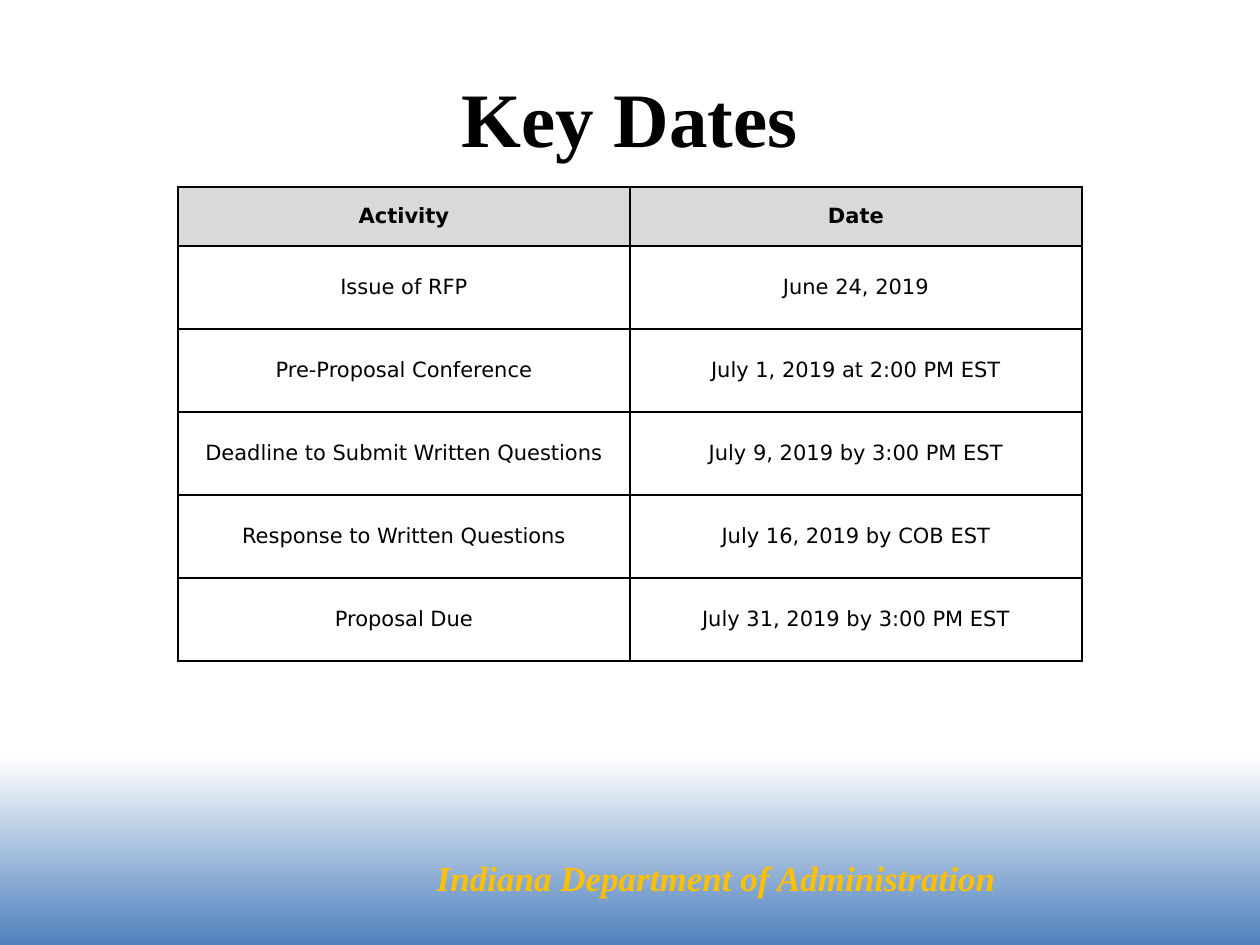
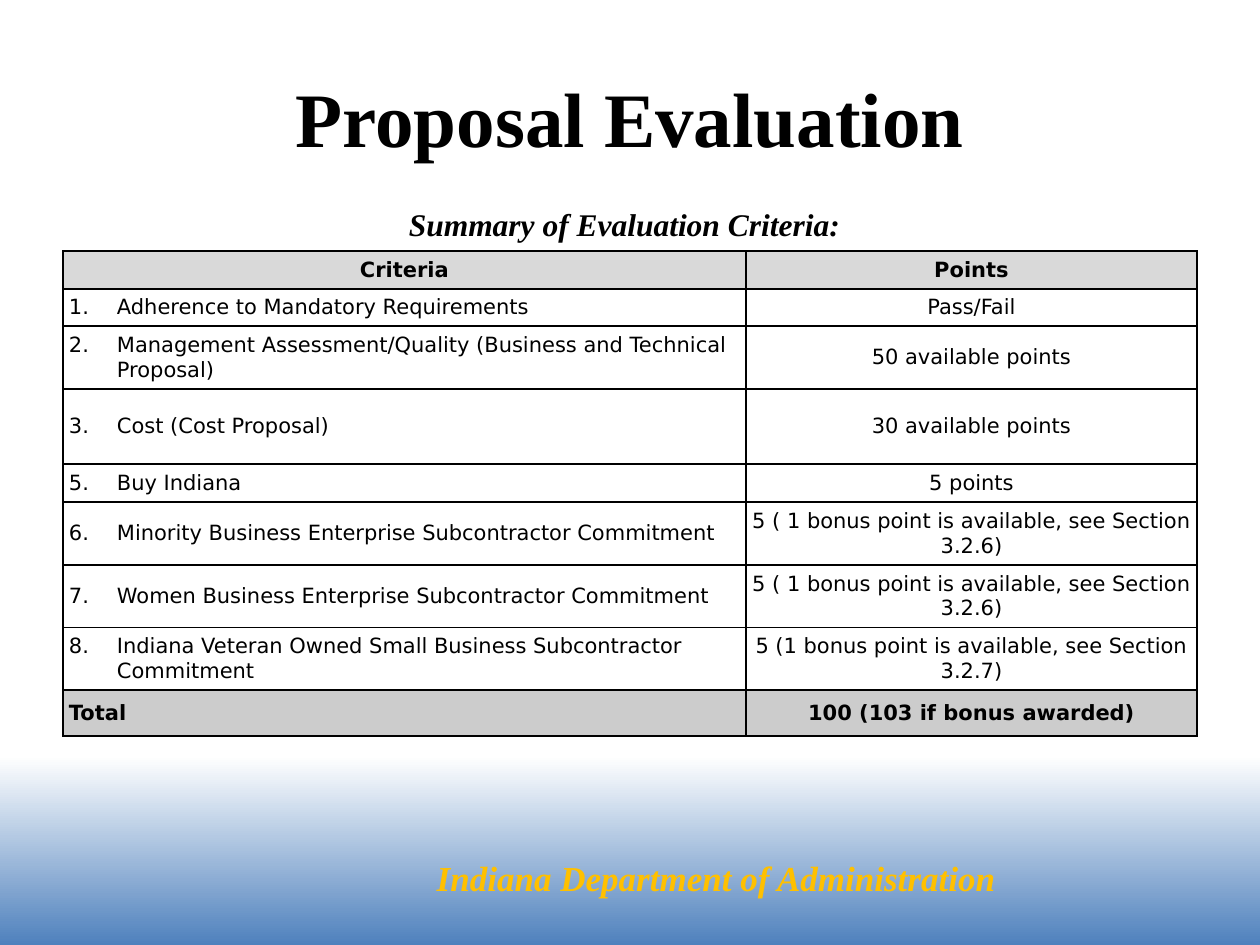
from lxml.etree import SubElement as Sub
from pptx import Presentation
from pptx.dml.color import RGBColor
from pptx.enum.text import MSO_ANCHOR as Anchor, MSO_AUTO_SIZE as Fit, PP_ALIGN as Align
from pptx.oxml.ns import qn
from pptx.util import Emu, Pt

SERIF, SANS = "Times New Roman", "DejaVu Sans"
BLACK, WHITE, BLUE, GOLD = "000000", "FFFFFF", "4F81BD", "FFC000"
HEAD, TOTAL = "D9D9D9", "CCCCCC"
FOOTER = "Indiana Department of Administration"

DATES = [
    ("Activity", "Date"),
    ("Issue of RFP", "June 24, 2019"),
    ("Pre-Proposal Conference", "July 1, 2019 at 2:00 PM EST"),
    ("Deadline to Submit Written Questions", "July 9, 2019 by 3:00 PM EST"),
    ("Response to Written Questions", "July 16, 2019 by COB EST"),
    ("Proposal Due", "July 31, 2019 by 3:00 PM EST"),
]

# list number, criterion, points, row height
CRITERIA = [
    (None, "Criteria", "Points", 38),
    (1, "Adherence to Mandatory Requirements", "Pass/Fail", 37),
    (2, "Management Assessment/Quality (Business and Technical Proposal)",
     "50 available points", 63),
    (3, "Cost (Cost Proposal)", "30 available points", 75),
    (5, "Buy Indiana", "5 points", 38),
    (6, "Minority Business Enterprise Subcontractor Commitment",
     "5 ( 1 bonus point is available, see Section 3.2.6)", 63),
    (7, "Women Business Enterprise Subcontractor Commitment",
     "5 ( 1 bonus point is available, see Section 3.2.6)", 62),
    (8, "Indiana Veteran Owned Small Business Subcontractor Commitment",
     "5 (1 bonus point is available, see Section 3.2.7)", 62),
    (None, "Total", "100 (103 if bonus awarded)", 46),
]


def px(n):
    return Emu(round(n * 914400 / 126))


def rgb(code):
    return RGBColor.from_string(code)


def write(frame, text, size, face, color=BLACK, bold=True, slant=False, align=Align.CENTER):
    frame.text = text
    para = frame.paragraphs[0]
    para.alignment = align
    font = para.runs[0].font
    font.size, font.name = Pt(size), face
    font.bold, font.italic = bold, slant
    font.color.rgb = rgb(color)


def add_label(slide, box, text, size, color, align):
    frame = slide.shapes.add_textbox(*map(px, box)).text_frame
    frame.word_wrap = True
    frame.auto_size = Fit.SHAPE_TO_FIT_TEXT
    write(frame, text, size, SERIF, color, slant=True, align=align)


def add_slide(deck, text):
    slide = deck.slides.add_slide(deck.slide_layouts[5])
    title = slide.shapes.title
    title.left, title.top, title.width, title.height = map(px, (63, 38, 1134, 157))
    title.text_frame.vertical_anchor = Anchor.MIDDLE
    write(title.text_frame, text, 44, SERIF)
    add_label(slide, (336, 850, 672, 55), FOOTER, 20, GOLD, Align.RIGHT)
    return slide


def edge(cell):
    """Draw a thin black line on all four sides of the cell."""
    props = cell._tc.get_or_add_tcPr()
    for side in "LRTB":
        line = Sub(props, qn(f"a:ln{side}"), w=str(Pt(1)))
        Sub(Sub(line, qn("a:solidFill")), qn("a:srgbClr"), val=BLACK)


def number(cell, start):
    """Give the cell a hanging list number."""
    props = cell.text_frame.paragraphs[0]._p.get_or_add_pPr()
    props.set("marL", str(px(48)))
    props.set("indent", str(-px(48)))
    Sub(props, qn("a:buAutoNum"), type="arabicPeriod", startAt=str(start))


def add_grid(slide, left, top, cols, tall, rows, fills):
    """Add a bordered table; fills maps a row index to its shade."""
    grid = slide.shapes.add_table(
        len(rows), len(cols), px(left), px(top), px(sum(cols)), px(sum(tall))).table
    grid.first_row = grid.horz_banding = False
    for col, wide in zip(grid.columns, cols):
        col.width = px(wide)
    for i, (row, high, texts) in enumerate(zip(grid.rows, tall, rows)):
        row.height = px(high)
        for cell, text in zip(row.cells, texts):
            cell.margin_left = cell.margin_right = px(6)
            cell.margin_top = cell.margin_bottom = px(6)
            cell.vertical_anchor = Anchor.MIDDLE
            write(cell.text_frame, text, 12, SANS, bold=i in fills)
            edge(cell)
            if i in fills:
                cell.fill.solid()
                cell.fill.fore_color.rgb = rgb(fills[i])
            else:
                cell.fill.background()
    return grid


def set_back(deck):
    fill = deck.slide_master.background.fill
    fill.gradient()
    fill.gradient_angle = 90
    for stop, place, color in zip(fill.gradient_stops, (0, 0.2), (BLUE, WHITE)):
        stop.position = place
        stop.color.rgb = rgb(color)


def add_dates(deck):
    slide = add_slide(deck, "Key Dates")
    tall = [59] + [83] * (len(DATES) - 1)
    add_grid(slide, 178, 187, (452, 452), tall, DATES, {0: HEAD})


def add_criteria(deck):
    slide = add_slide(deck, "Proposal Evaluation")
    add_label(slide, (336, 199, 577, 50), "Summary of Evaluation Criteria:",
              18, BLACK, Align.CENTER)
    nums, names, points, tall = zip(*CRITERIA)
    grid = add_grid(slide, 63, 251, (683, 451), tall, list(zip(names, points)),
                    {0: HEAD, len(CRITERIA) - 1: TOTAL})
    for i, num in enumerate(nums[1:], 1):
        cell = grid.cell(i, 0)
        cell.text_frame.paragraphs[0].alignment = Align.LEFT
        if num:
            number(cell, num)


def main():
    deck = Presentation()
    deck.slide_width, deck.slide_height = px(1260), px(945)
    set_back(deck)
    add_dates(deck)
    add_criteria(deck)
    deck.save("out.pptx")


if __name__ == "__main__":
    main()
